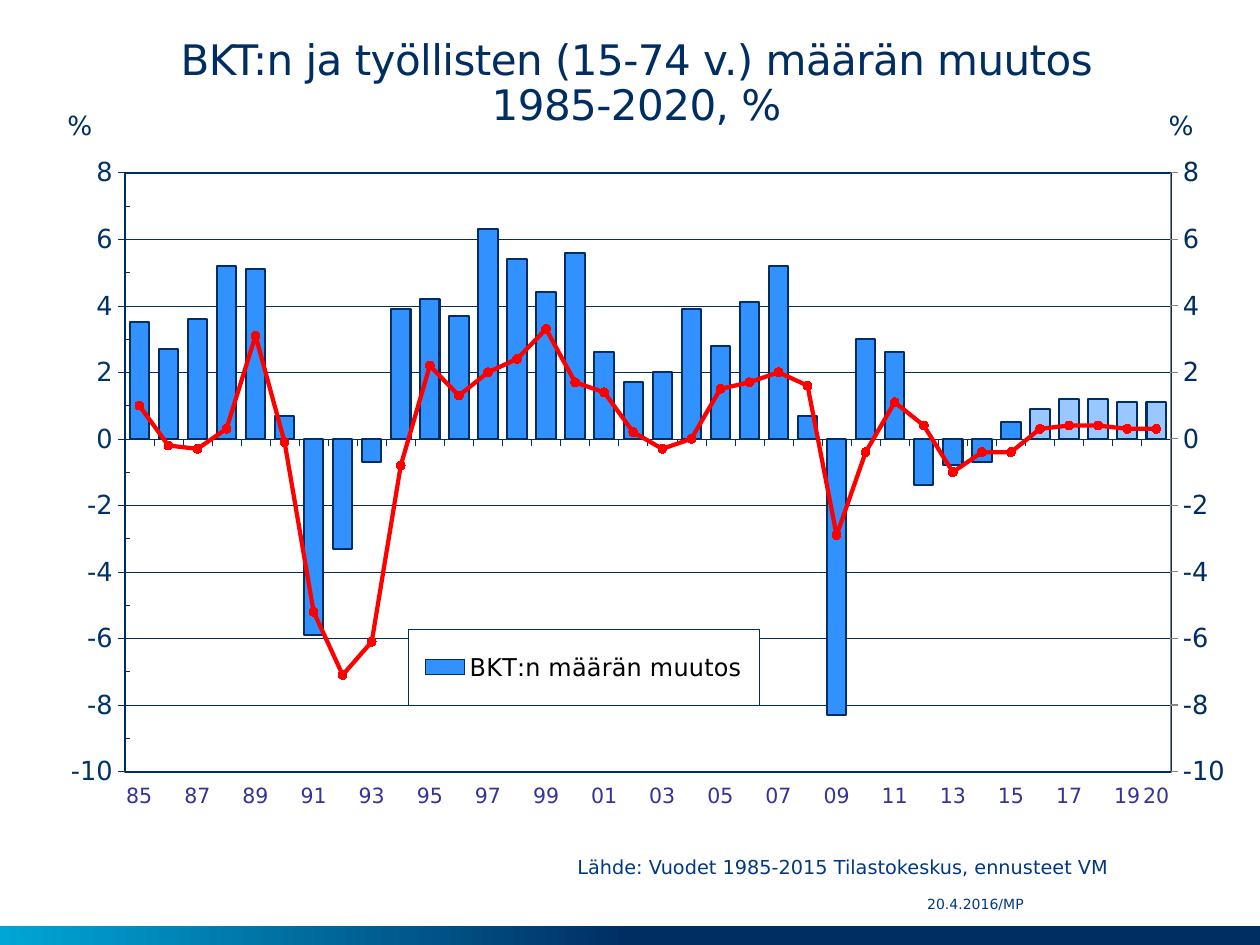
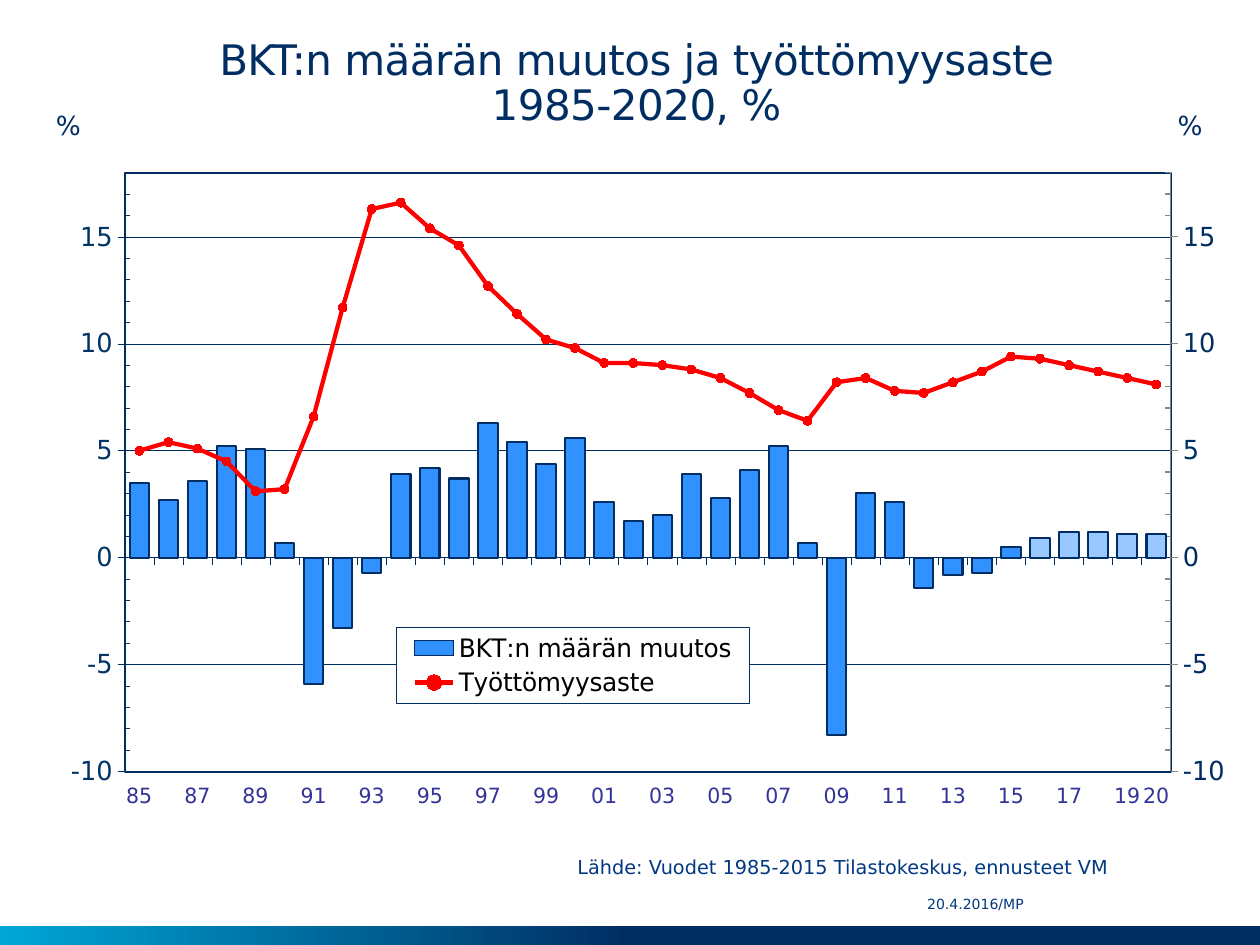
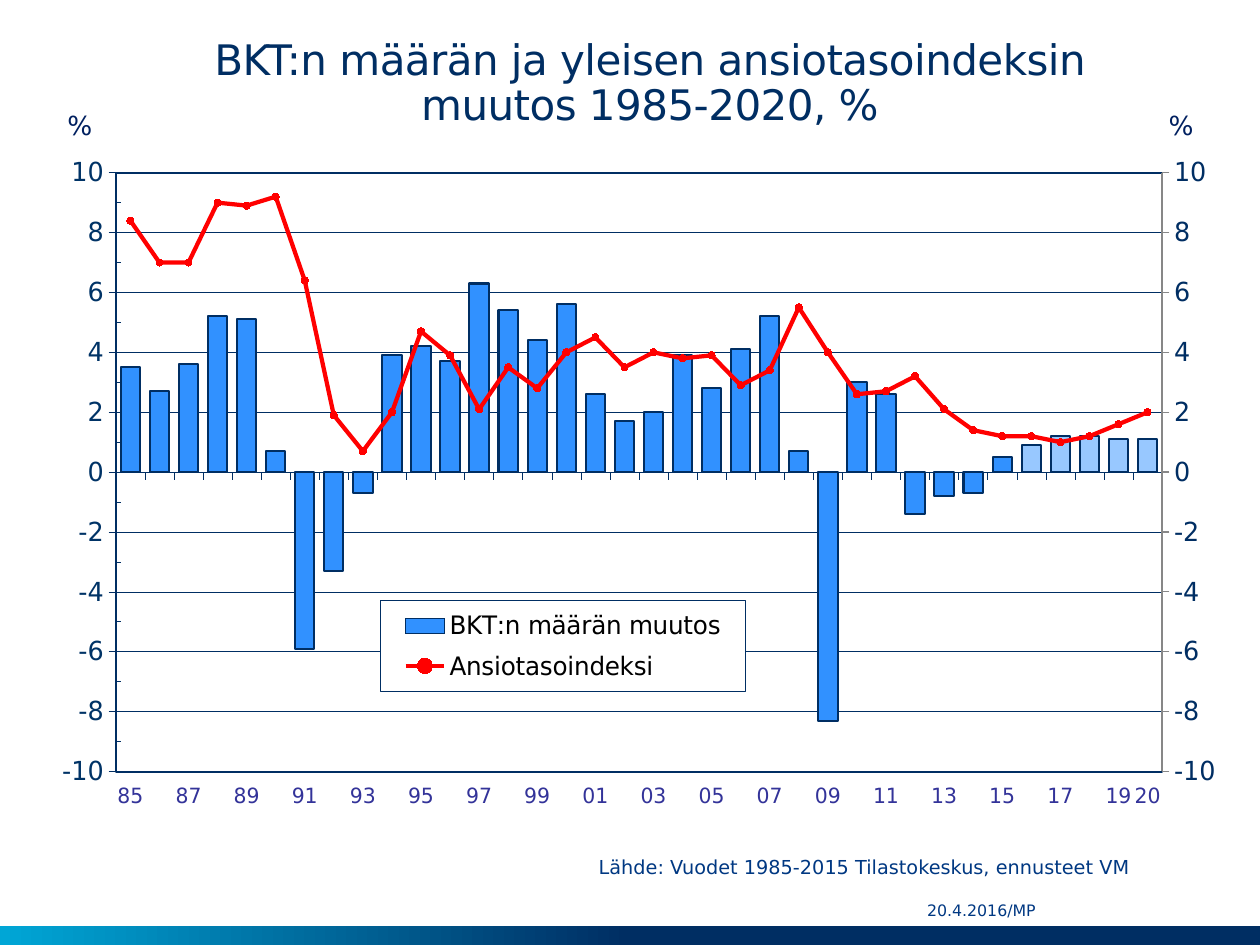
from copy import deepcopy

from pptx import Presentation
from pptx.chart.axis import ValueAxis
from pptx.chart.data import CategoryChartData
from pptx.dml.color import RGBColor
from pptx.enum.chart import XL_CHART_TYPE as ChartType
from pptx.enum.chart import XL_LEGEND_POSITION as LegendPos
from pptx.enum.chart import XL_MARKER_STYLE as Marker
from pptx.enum.chart import XL_TICK_LABEL_POSITION as LabelPos
from pptx.enum.chart import XL_TICK_MARK as Tick
from pptx.enum.dml import MSO_LINE
from pptx.enum.shapes import MSO_SHAPE
from pptx.enum.text import MSO_ANCHOR, MSO_AUTO_SIZE, PP_ALIGN
from pptx.oxml import parse_xml
from pptx.oxml.ns import nsdecls, qn
from pptx.util import Cm, Pt

FONT = "DejaVu Sans"
HEX = {
    "navy": "002E63", "cyan": "00A6D6", "note": "003882", "unit": "002060",
    "scale": "003366", "years": "333399", "bar": "3191FF", "forecast": "98C8FF",
    "line": "FF0000", "pink": "FF0066", "black": "000000", "white": "FFFFFF",
}
RGB = {name: RGBColor.from_string(value) for name, value in HEX.items()}

# Shared data: every other year is labelled, the last one too
YEARS = [f"{year % 100:02d}" if year % 2 or year == 2020 else ""
         for year in range(1985, 2021)]
FORECAST = range(31, 36)
GDP = [3.5, 2.7, 3.6, 5.2, 5.1, 0.7, -5.9, -3.3, -0.7, 3.9, 4.2, 3.7,
       6.3, 5.4, 4.4, 5.6, 2.6, 1.7, 2, 3.9, 2.8, 4.1, 5.2, 0.7,
       -8.3, 3, 2.6, -1.4, -0.8, -0.7, 0.5, 0.9, 1.2, 1.2, 1.1, 1.1]

# What differs between the slides
SLIDES = [
    dict(title=["BKT:n ja työllisten (15-74 v.) määrän muutos", "1985-2020, %"],
         title_box=(1.3, 0.33, 23.06, 2.41), chart_box=(0.89, 3.07, 23.8, 13.31),
         plot=(0.07, 0.031, 0.908, 0.907), legend=(0.316, 0.722, 0.305, 0.115),
         legend_size=14, only_bars_in_legend=True,
         top=8, major=2, right_minor=Tick.NONE, marker=(5, "pink"),
         units=(1.32, 23.52), unit_colour="navy", source_left=11.33,
         date=(17.98, 0.48, 8), name="Työllisten määrän muutos",
         values=[1, -0.2, -0.3, 0.3, 3.1, -0.1, -5.2, -7.1, -6.1, -0.8, 2.2, 1.3,
                 2, 2.4, 3.3, 1.7, 1.4, 0.2, -0.3, 0, 1.5, 1.7, 2, 1.6,
                 -2.9, -0.4, 1.1, 0.4, -1, -0.4, -0.4, 0.3, 0.4, 0.4, 0.3, 0.3]),
    dict(title=["BKT:n määrän muutos ja työttömyysaste", "1985-2020, %"],
         title_box=(1.3, 0.33, 23.06, 2.41), chart_box=(0.89, 3.07, 23.8, 13.31),
         plot=(0.07, 0.031, 0.908, 0.907), legend=(0.306, 0.72, 0.306, 0.114),
         legend_size=14.5, only_bars_in_legend=False,
         top=18, major=5, right_minor=Tick.INSIDE, marker=(5, "pink"),
         units=(1.09, 23.7), unit_colour="navy", source_left=11.33,
         date=(17.98, 0.48, 8), name="Työttömyysaste",
         values=[5, 5.4, 5.1, 4.5, 3.1, 3.2, 6.6, 11.7, 16.3, 16.6, 15.4, 14.6,
                 12.7, 11.4, 10.2, 9.8, 9.1, 9.1, 9, 8.8, 8.4, 7.7, 6.9, 6.4,
                 8.2, 8.4, 7.8, 7.7, 8.2, 8.7, 9.4, 9.3, 9, 8.7, 8.4, 8.1]),
    dict(title=["BKT:n määrän ja yleisen ansiotasoindeksin", "muutos 1985-2020, %"],
         title_box=(1.3, 0.74, 23.6, 2.01), chart_box=(0.94, 3.07, 23.57, 13.31),
         plot=(0.061, 0.031, 0.922, 0.907), legend=(0.294, 0.678, 0.322, 0.139),
         legend_size=14.5, only_bars_in_legend=False,
         top=10, major=2, right_minor=Tick.NONE, marker=(4, "line"),
         units=(1.32, 23.52), unit_colour="unit", source_left=11.76,
         date=(17.96, 0.76, 9), name="Ansiotasoindeksi",
         values=[8.4, 7, 7, 9, 8.9, 9.2, 6.4, 1.9, 0.7, 2, 4.7, 3.9,
                 2.1, 3.5, 2.8, 4, 4.5, 3.5, 4, 3.8, 3.9, 2.9, 3.4, 5.5,
                 4, 2.6, 2.7, 3.2, 2.1, 1.4, 1.2, 1.2, 1, 1.2, 1.6, 2]),
]


def add_label(slide, box, text, size, colour, align, wrap=False):
    label = slide.shapes.add_textbox(*map(Cm, box))
    frame = label.text_frame
    frame.margin_left = frame.margin_right = frame.margin_top = frame.margin_bottom = 0
    frame.word_wrap = wrap
    frame.auto_size = MSO_AUTO_SIZE.NONE if wrap else MSO_AUTO_SIZE.SHAPE_TO_FIT_TEXT
    frame.vertical_anchor = MSO_ANCHOR.MIDDLE if wrap else MSO_ANCHOR.TOP
    frame.paragraphs[0].alignment = align
    run = frame.paragraphs[0].add_run()
    run.text = text
    run.font.name, run.font.size = FONT, Pt(size)
    run.font.color.rgb = RGB[colour]


def chart_part(tag, fractions=None, inner=False):
    """A manual layout, or a box format with a navy outline."""
    if fractions:
        target = '<c:layoutTarget val="inner"/>' if inner else ""
        modes = "".join(f'<c:{m}Mode val="edge"/>' for m in "xy")
        sizes = "".join(f'<c:{k} val="{v}"/>' for k, v in zip("xywh", fractions))
        body = f"<c:manualLayout>{target}{modes}{sizes}</c:manualLayout>"
    else:
        fill = "<a:noFill/>" if inner else (
            f'<a:solidFill><a:srgbClr val="{HEX["white"]}"/></a:solidFill>')
        width = Pt(1.2) if inner else Pt(0.3)
        body = (f'{fill}<a:ln w="{width}"><a:solidFill>'
                f'<a:srgbClr val="{HEX["navy"]}"/></a:solidFill></a:ln>')
    return parse_xml(f'<c:{tag} {nsdecls("c", "a")}>{body}</c:{tag}>')


deck = Presentation()
deck.slide_width, deck.slide_height = Cm(25.4), Cm(19.05)
title_only = deck.slide_layouts[5]

for number, content in enumerate(SLIDES):
    slide = deck.slides.add_slide(title_only)

    # Bottom band, placed once on the layout
    if number == 0:
        band = slide.shapes.add_shape(MSO_SHAPE.RECTANGLE, 0, Cm(18.67), Cm(25.4), Cm(0.38))
        band.shadow.inherit = False
        band.line.fill.background()
        band.fill.gradient()
        band.fill.gradient_angle = 180
        for stop, (place, colour) in zip(band.fill.gradient_stops,
                                         [(0.5, "navy"), (1, "cyan")]):
            stop.position = place
            stop.color.rgb = RGB[colour]
        title_only.shapes._spTree.append(band._element)

    # Title
    title = slide.shapes.title
    title.left, title.top, title.width, title.height = map(Cm, content["title_box"])
    frame = title.text_frame
    frame.auto_size = MSO_AUTO_SIZE.NONE
    frame.vertical_anchor = MSO_ANCHOR.BOTTOM
    frame.margin_left = frame.margin_right = 0
    frame.margin_top = frame.margin_bottom = Cm(0.13)
    heading = frame.paragraphs[0]
    heading.alignment, heading.line_spacing = PP_ALIGN.CENTER, 0.9
    for row, words in enumerate(content["title"]):
        if row:
            heading.add_line_break()
        run = heading.add_run()
        run.text = words
        run.font.name, run.font.size = FONT, Pt(24)
        run.font.color.rgb = RGB["navy"]
        run.font._element.set("spc", "-30")

    # Chart with both series as columns
    figures = CategoryChartData()
    figures.categories = YEARS
    figures.add_series("BKT:n määrän muutos", GDP)
    figures.add_series(content["name"], content["values"])
    chart = slide.shapes.add_chart(ChartType.COLUMN_CLUSTERED,
                                   *map(Cm, content["chart_box"]), figures).chart
    chart.has_title = False
    chart.font.name, chart.font.size = FONT, Pt(15)
    chart.font.color.rgb = RGB["navy"]

    # Left axis and years
    years, scale = chart.category_axis, chart.value_axis
    years.tick_label_position = LabelPos.LOW
    scale.minimum_scale, scale.maximum_scale = -10, content["top"]
    scale.major_unit, scale.minor_unit = content["major"], 1
    scale.minor_tick_mark = Tick.INSIDE
    scale.tick_labels.number_format = "0"
    scale.tick_labels.number_format_is_linked = False
    for axis, size, colour in [(years, 12, "years"), (scale, 15, "scale")]:
        axis.major_tick_mark = Tick.OUTSIDE
        axis.format.line.color.rgb = RGB["navy"]
        axis.format.line.width = Pt(0.3)
        font = axis.tick_labels.font
        font.name, font.size, font.bold = FONT, Pt(size), False
        font.color.rgb = RGB[colour]
    grid = scale.major_gridlines.format.line
    grid.color.rgb = RGB["navy"]
    grid.width = Pt(0.25)
    grid.dash_style = MSO_LINE.ROUND_DOT
    years._element.find(qn("c:noMultiLvlLbl")).addprevious(
        parse_xml(f'<c:tickLblSkip {nsdecls("c")} val="1"/>'))
    scale._element.find(qn("c:crosses")).addnext(
        parse_xml(f'<c:crossBetween {nsdecls("c")} val="between"/>'))

    # Second series becomes a line on a right axis
    plot_area = chart._chartSpace.xpath("c:chart/c:plotArea")[0]
    columns = plot_area.find(qn("c:barChart"))
    line_plot = parse_xml(
        f'<c:lineChart {nsdecls("c")}><c:grouping val="standard"/><c:varyColors val="0"/>'
        '<c:marker val="1"/><c:axId val="50010"/><c:axId val="50020"/></c:lineChart>')
    moved = columns.findall(qn("c:ser"))[1]
    for old in moved.findall(qn("c:invertIfNegative")):
        moved.remove(old)
    line_plot.find(qn("c:varyColors")).addnext(moved)
    columns.addnext(line_plot)

    hidden_years, right = deepcopy(years._element), deepcopy(scale._element)
    for axis, own, other in [(hidden_years, "50010", "50020"), (right, "50020", "50010")]:
        axis.find(qn("c:axId")).set("val", own)
        axis.find(qn("c:crossAx")).set("val", other)
        for tag in ("c:spPr", "c:majorGridlines"):
            for old in axis.findall(qn(tag)):
                axis.remove(old)
    hidden_years.find(qn("c:delete")).set("val", "1")
    right.find(qn("c:axPos")).set("val", "r")
    right.find(qn("c:crosses")).set("val", "max")
    scale._element.addnext(right)
    right.addnext(hidden_years)
    right_scale = ValueAxis(right)
    right_scale.minor_tick_mark = content["right_minor"]
    right_scale.tick_labels.font.color.rgb = RGB["navy"]

    # Plot frame
    for old in plot_area.findall(qn("c:layout")):
        plot_area.remove(old)
    plot_area.insert(0, chart_part("layout", content["plot"], inner=True))
    plot_area.append(chart_part("spPr", inner=True))

    # Columns, with the forecast years lighter
    gdp_plot, trend_plot = chart.plots
    gdp_plot.gap_width = 50
    gdp_plot.vary_by_categories = False
    gdp = gdp_plot.series[0]
    gdp.invert_if_negative = False
    painted = [(gdp, "bar")] + [(gdp.points[i], "forecast") for i in FORECAST]
    for part, colour in painted:
        part.format.fill.solid()
        part.format.fill.fore_color.rgb = RGB[colour]
        part.format.line.color.rgb = RGB["navy"]
        part.format.line.width = Pt(1.2)

    # Line and its markers
    trend = trend_plot.series[0]
    trend.smooth = False
    trend.format.line.color.rgb = RGB["line"]
    trend.format.line.width = Pt(2.5)
    marker_size, marker_colour = content["marker"]
    trend.marker.style, trend.marker.size = Marker.CIRCLE, marker_size
    trend.marker.format.fill.solid()
    trend.marker.format.fill.fore_color.rgb = RGB[marker_colour]
    trend.marker.format.line.color.rgb = RGB["line"]

    # Legend
    chart.has_legend = True
    legend = chart.legend
    legend.position = LegendPos.RIGHT
    legend.include_in_layout = False
    legend.font.name, legend.font.size = FONT, Pt(content["legend_size"])
    legend.font.bold = False
    legend.font.color.rgb = RGB["black"]
    for old in legend._element.findall(qn("c:layout")):
        legend._element.remove(old)
    overlay = legend._element.find(qn("c:overlay"))
    if content["only_bars_in_legend"]:
        overlay.addprevious(parse_xml(
            f'<c:legendEntry {nsdecls("c")}><c:idx val="1"/><c:delete val="1"/></c:legendEntry>'))
    overlay.addprevious(chart_part("layout", content["legend"]))
    overlay.addnext(chart_part("spPr"))

    # Units, source and date
    for left in content["units"]:
        add_label(slide, (left, 2.21, 0.58, 0.64), "%", 15,
                  content["unit_colour"], PP_ALIGN.CENTER)
    add_label(slide, (content["source_left"], 17.25, 11.33, 0.48),
              "Lähde: Vuodet 1985-2015 Tilastokeskus, ennusteet VM", 11,
              "note", PP_ALIGN.CENTER)
    date_top, date_height, date_size = content["date"]
    add_label(slide, (18.69, date_top, 5.16, date_height), "20.4.2016/MP",
              date_size, "note", PP_ALIGN.LEFT, wrap=True)

deck.save("out.pptx")
